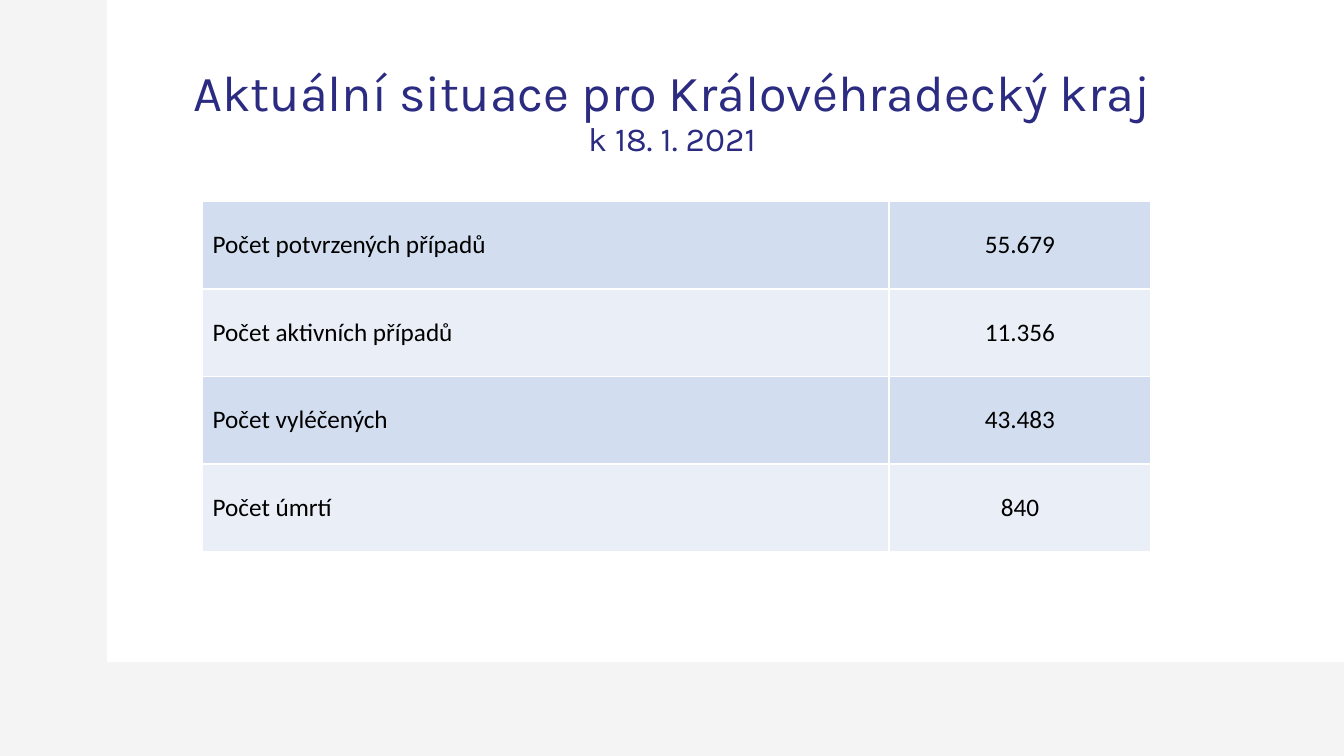
from dataclasses import dataclass

from lxml.etree import SubElement
from pptx import Presentation
from pptx.dml.color import RGBColor
from pptx.enum.shapes import MSO_SHAPE
from pptx.enum.text import MSO_ANCHOR, MSO_AUTO_SIZE, PP_ALIGN
from pptx.oxml.ns import qn
from pptx.util import Pt


@dataclass(frozen=True)
class Theme:
    backdrop: str = "F4F4F4"
    panel: str = "FFFFFF"
    title: str = "2B2B82"
    text: str = "000000"
    border: str = "FFFFFF"
    bands: tuple = ("D2DEEF", "EAEFF7")
    title_font: str = "Karla"
    body_font: str = "Calibri"
    title_size: int = 36
    date_size: int = 24
    body_size: int = 18


THEME = Theme()

CASE_COUNTS = [
    ("Počet potvrzených případů", "55.679"),
    ("Počet aktivních případů", "11.356"),
    ("Počet vyléčených", "43.483"),
    ("Počet úmrtí", "840"),
]


def style_run(r, font, size, color):
    r.font.name = font
    r.font.size = Pt(size)
    r.font.color.rgb = RGBColor.from_string(color)


def set_background(s, color):
    fill = s.background.fill
    fill.solid()
    fill.fore_color.rgb = RGBColor.from_string(color)


def add_panel(s, left, top, width, height):
    sp = s.shapes.add_shape(MSO_SHAPE.RECTANGLE, Pt(left), Pt(top), Pt(width), Pt(height))
    sp.shadow.inherit = False
    sp.fill.solid()
    sp.fill.fore_color.rgb = RGBColor.from_string(THEME.panel)
    sp.line.fill.background()
    # Behind the title placeholder
    s.shapes._spTree.insert(2, sp._element)


def set_title(s, heading, date, left, top, width, height):
    sp = s.shapes.title
    sp.left, sp.top, sp.width, sp.height = Pt(left), Pt(top), Pt(width), Pt(height)
    tf = sp.text_frame
    tf.text = f"{heading}\v{date}"
    tf.word_wrap = True
    tf.auto_size = MSO_AUTO_SIZE.NONE
    tf.vertical_anchor = MSO_ANCHOR.MIDDLE
    p = tf.paragraphs[0]
    p.alignment = PP_ALIGN.CENTER
    p.line_spacing = 0.9
    for r, size in zip(p.runs, (THEME.title_size, THEME.date_size)):
        style_run(r, THEME.title_font, size, THEME.title)
    # The line break keeps the heading's size
    line_break = p._p.find(qn("a:br"))
    SubElement(line_break, qn("a:rPr"), sz=str(THEME.title_size * 100))


def set_borders(cell, color, width):
    tc_pr = cell._tc.get_or_add_tcPr()
    for index, side in enumerate(("a:lnL", "a:lnR", "a:lnT", "a:lnB")):
        ln = SubElement(tc_pr, qn(side), w=str(Pt(width)))
        fill = SubElement(ln, qn("a:solidFill"))
        SubElement(fill, qn("a:srgbClr"), val=color)
        tc_pr.insert(index, ln)


def fill_cell(cell, text, align, band):
    cell.fill.solid()
    cell.fill.fore_color.rgb = RGBColor.from_string(band)
    cell.vertical_anchor = MSO_ANCHOR.MIDDLE
    set_borders(cell, THEME.border, 1)
    p = cell.text_frame.paragraphs[0]
    p.text = text
    p.alignment = align
    style_run(p.runs[0], THEME.body_font, THEME.body_size, THEME.text)


def add_count_table(s, rows, left, top, col_widths, row_height):
    frame = s.shapes.add_table(
        len(rows), len(col_widths), Pt(left), Pt(top),
        Pt(sum(col_widths)), Pt(row_height * len(rows)))
    table = frame.table
    table.first_row = table.horz_banding = False
    for column, width in zip(table.columns, col_widths):
        column.width = Pt(width)
    for i, values in enumerate(rows):
        table.rows[i].height = Pt(row_height)
        band = THEME.bands[i % len(THEME.bands)]
        for j, (text, align) in enumerate(zip(values, (PP_ALIGN.LEFT, PP_ALIGN.CENTER))):
            fill_cell(table.cell(i, j), text, align, band)


def main():
    prs = Presentation()
    prs.slide_width, prs.slide_height = Pt(960), Pt(540)
    s = prs.slides.add_slide(prs.slide_layouts[5])

    # Backdrop and white panel
    set_background(s, THEME.backdrop)
    add_panel(s, 76.5, 0, 883.5, 473)

    # Title with date
    set_title(s, "Aktuální situace pro Královéhradecký kraj", "k 18. 1. 2021",
              66, 29, 828, 104)

    # Case counts
    add_count_table(s, CASE_COUNTS, 144.7, 144, (490.3, 187.2), 62.5)

    prs.save("out.pptx")


if __name__ == "__main__":
    main()
